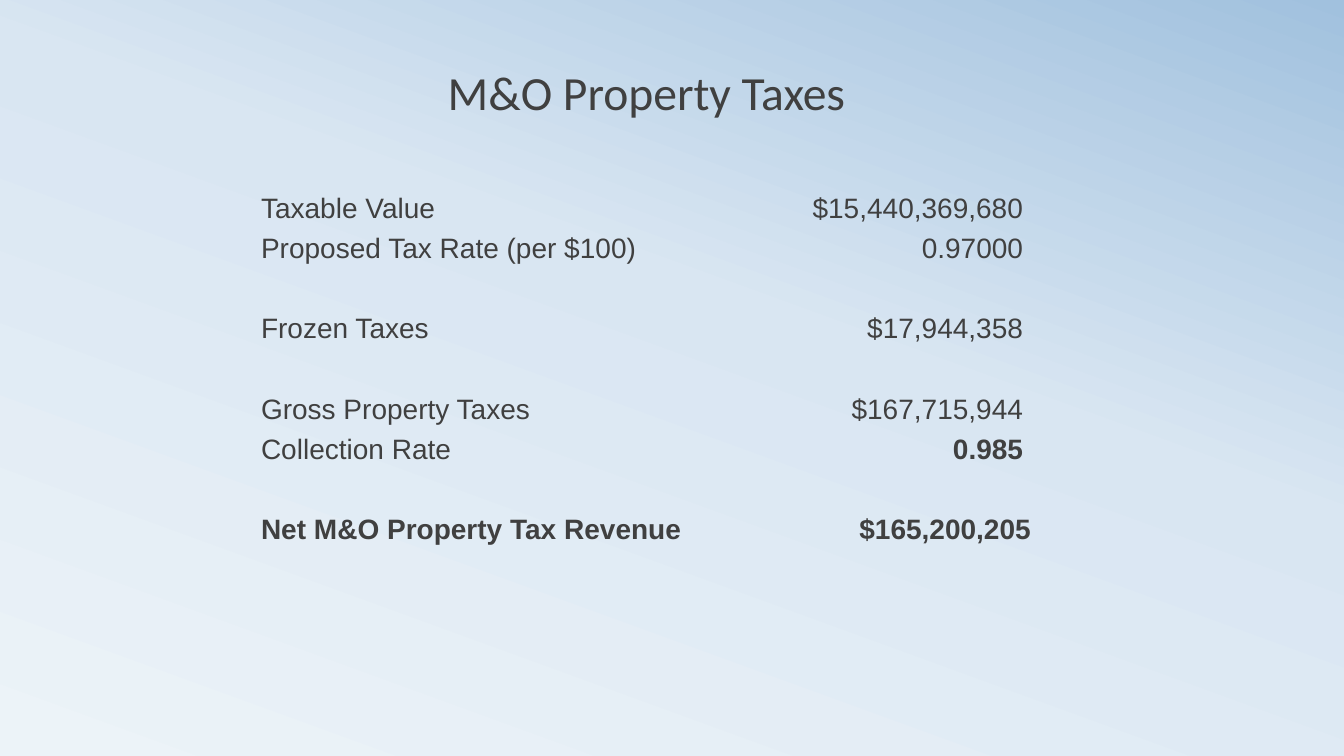
import copy
import dataclasses

import pptx
import pptx.dml.color
import pptx.enum.text
import pptx.oxml.ns
import pptx.util

PX = 9144000 / 1008  # EMU in one px
TEXT_COLOUR = "404040"
PLAIN_TABLE_STYLE = "{2D5ABB26-0587-4C30-8999-92F81FD0307C}"
ALIGN = pptx.enum.text.PP_ALIGN
ANCHOR = pptx.enum.text.MSO_ANCHOR


@dataclasses.dataclass
class TaxRow:
    label: str = ""
    amount: str = ""
    bold_label: bool = False
    bold_amount: bool = False


TAX_ROWS = [
    TaxRow("Taxable Value", "$15,440,369,680 "),
    TaxRow("Proposed Tax Rate (per $100)", "0.97000 "),
    TaxRow(),
    TaxRow("Frozen Taxes", "$17,944,358 "),
    TaxRow(),
    TaxRow("Gross Property Taxes", "$167,715,944 "),
    TaxRow("Collection Rate", "0.985 ", bold_amount=True),
    TaxRow(),
    TaxRow("Net M&O Property Tax Revenue", "$165,200,205", True, True),
    TaxRow(),
    TaxRow(),
]
COLUMN_WIDTHS = [462, 310]
BACKGROUND_STOPS = [(0, "ECF3F8"), (0.58, "D9E6F2"), (1, "A1C1DE")]


def px(length: int) -> int:
    return pptx.util.Emu(round(length * PX))


def colour(value: str) -> pptx.dml.color.RGBColor:
    return pptx.dml.color.RGBColor.from_string(value)


def format_text(para, font: str, size: int, align, bold: bool = False) -> None:
    para.alignment = align
    for span in para.runs:
        span.font.name = font
        span.font.size = pptx.util.Pt(size)
        span.font.bold = bold
        span.font.color.rgb = colour(TEXT_COLOUR)


def paint_background(page) -> None:
    fill = page.background.fill
    fill.gradient()
    fill.gradient_angle = 70
    # The default gradient has two stops; add the third
    stop_list = next(page.element.iter(pptx.oxml.ns.qn("a:gsLst")))
    stop_list.append(copy.deepcopy(stop_list[0]))
    for stop, (position, value) in zip(fill.gradient_stops, BACKGROUND_STOPS):
        stop.position = position
        stop.color.rgb = colour(value)


def add_title(page, text: str) -> None:
    title = page.shapes.title
    title.left, title.top, title.width, title.height = map(px, (283, 42, 727, 83))
    frame = title.text_frame
    frame.text = text
    frame.vertical_anchor = ANCHOR.BOTTOM
    frame.auto_size = pptx.enum.text.MSO_AUTO_SIZE.NONE
    para = frame.paragraphs[0]
    para.line_spacing = 0.8
    format_text(para, "Calibri", 34, ALIGN.CENTER)


def fill_cell(cell, text: str, align, bold: bool) -> None:
    cell.fill.background()
    cell.vertical_anchor = ANCHOR.BOTTOM
    cell.margin_left = cell.margin_right = cell.margin_top = px(1)
    cell.margin_bottom = 0
    if text:
        cell.text = text
        format_text(cell.text_frame.paragraphs[0], "Arial", 20, align, bold)


def add_tax_table(page, rows: list[TaxRow]) -> None:
    frame = page.shapes.add_table(
        len(rows), 2, px(260), px(184), px(sum(COLUMN_WIDTHS)), px(442))
    table = frame.table
    table.first_row = table.horz_banding = False
    next(frame.element.iter(pptx.oxml.ns.qn("a:tableStyleId"))).text = PLAIN_TABLE_STYLE
    for column, width in zip(table.columns, COLUMN_WIDTHS):
        column.width = px(width)
    for index, row in enumerate(rows):
        fill_cell(table.cell(index, 0), row.label, ALIGN.LEFT, row.bold_label)
        fill_cell(table.cell(index, 1), row.amount, ALIGN.RIGHT, row.bold_amount)


def main() -> None:
    deck = pptx.Presentation()
    deck.slide_width, deck.slide_height = px(1344), px(756)
    page = deck.slides.add_slide(deck.slide_layouts[5])
    paint_background(page)
    add_title(page, "M&O Property Taxes")
    add_tax_table(page, TAX_ROWS)
    deck.save("out.pptx")


if __name__ == "__main__":
    main()
